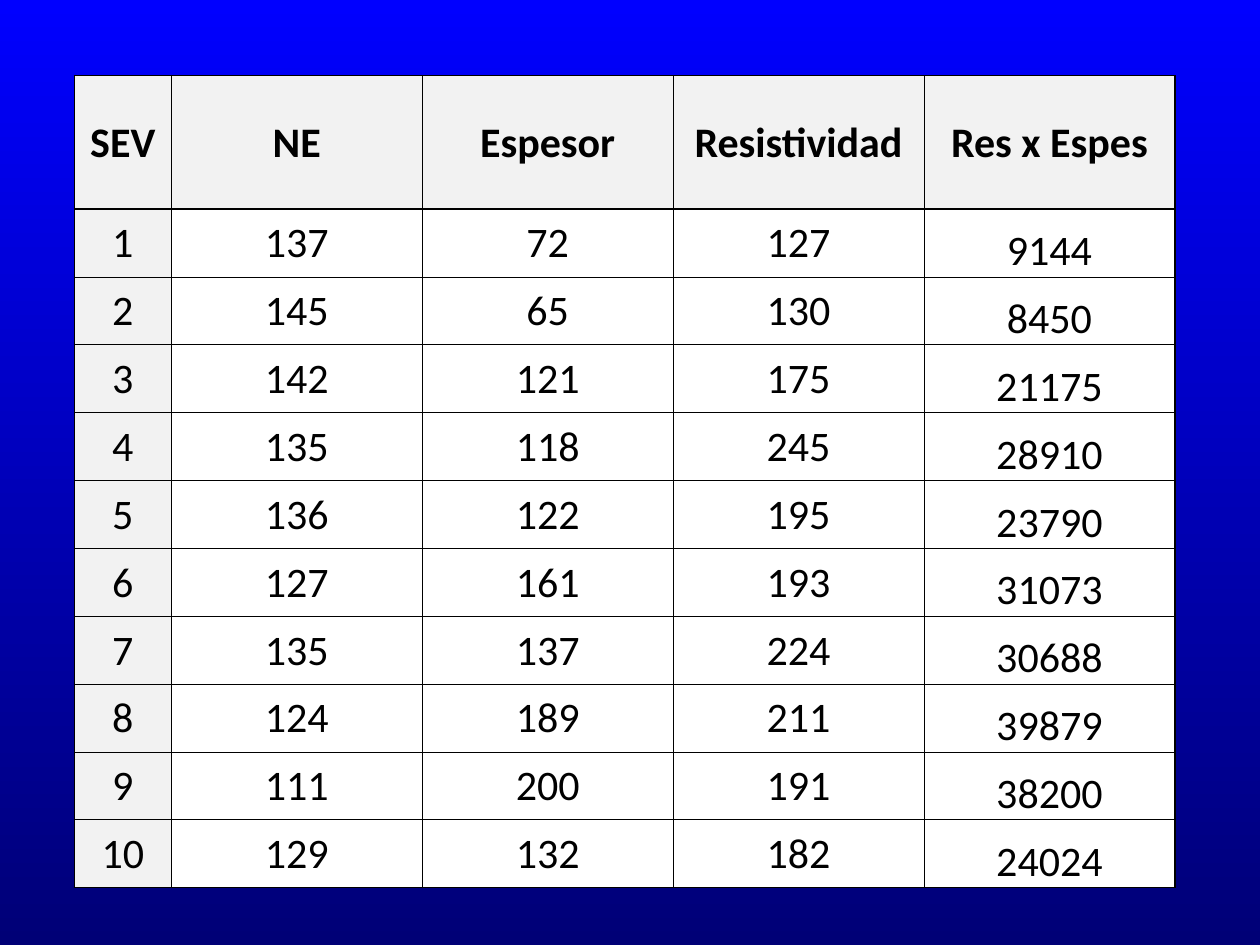
from pptx import Presentation
from pptx.dml.color import RGBColor
from pptx.enum.text import MSO_ANCHOR, PP_ALIGN
from pptx.oxml import parse_xml
from pptx.oxml.ns import nsdecls
from pptx.util import Pt

HEADERS = ["SEV", "NE", "Espesor", "Resistividad", "Res x Espes"]
SOUNDINGS = [
    (1, 137, 72, 127, 9144),
    (2, 145, 65, 130, 8450),
    (3, 142, 121, 175, 21175),
    (4, 135, 118, 245, 28910),
    (5, 136, 122, 195, 23790),
    (6, 127, 161, 193, 31073),
    (7, 135, 137, 224, 30688),
    (8, 124, 189, 211, 39879),
    (9, 111, 200, 191, 38200),
    (10, 129, 132, 182, 24024),
]


def color(value):
    return RGBColor.from_string(value)


class SlideBuilder:
    font_name = "Calibri"
    font_size = 24
    ink = "000000"
    label_fill = "F2F2F2"
    value_fill = "FFFFFF"
    thin, thick = 0.5, 1

    def __init__(self, slide):
        self.slide = slide

    def background(self, top, bottom):
        fill = self.slide.background.fill
        fill.gradient()
        fill.gradient_angle = 270
        for stop, position, value in zip(fill.gradient_stops, (0, 1), (top, bottom)):
            stop.position = position
            stop.color.rgb = color(value)

    def borders(self, cell, widths):
        properties = cell._tc.get_or_add_tcPr()
        for index, (side, width) in enumerate(widths.items()):
            properties.insert(index, parse_xml(
                f'<a:ln{side} {nsdecls("a")} w="{Pt(width)}"><a:solidFill>'
                f'<a:srgbClr val="{self.ink}"/></a:solidFill></a:ln{side}>'))

    def cell(self, cell, text, is_label, is_bold, anchor):
        cell.text = str(text)
        cell.vertical_anchor = anchor
        cell.margin_left = cell.margin_right = cell.margin_top = Pt(0.72)
        cell.margin_bottom = 0
        cell.fill.solid()
        cell.fill.fore_color.rgb = color(self.label_fill if is_label else self.value_fill)
        paragraph = cell.text_frame.paragraphs[0]
        paragraph.alignment = PP_ALIGN.CENTER
        font = paragraph.font
        font.name, font.size, font.bold = self.font_name, Pt(self.font_size), is_bold
        font.color.rgb = color(self.ink)

    def table(self, left, top, column_widths, row_heights, rows):
        frame = self.slide.shapes.add_table(
            len(row_heights), len(column_widths), Pt(left), Pt(top),
            Pt(sum(column_widths)), Pt(sum(row_heights)))
        table = frame.table
        table.horz_banding = False
        for column, width in zip(table.columns, column_widths):
            column.width = Pt(width)
        for row, height in zip(table.rows, row_heights):
            row.height = Pt(height)

        last_row, last_column = len(rows) - 1, len(column_widths) - 1
        for r, values in enumerate(rows):
            for c, value in enumerate(values):
                cell = table.cell(r, c)
                # The computed last column sits at the bottom of its cells
                is_product = r > 0 and c == last_column
                anchor = MSO_ANCHOR.BOTTOM if is_product else MSO_ANCHOR.MIDDLE
                self.cell(cell, value, r == 0 or c == 0, r == 0, anchor)
                # Thick lines around the table and under the header
                is_thick = {"L": c == 0, "R": c == last_column,
                            "T": r <= 1, "B": r in (0, last_row)}
                self.borders(cell, {side: self.thick if thick else self.thin
                                    for side, thick in is_thick.items()})


def main():
    presentation = Presentation()
    presentation.slide_width, presentation.slide_height = Pt(720), Pt(540)
    blank_layout = presentation.slide_layouts[6]
    builder = SlideBuilder(presentation.slides.add_slide(blank_layout))

    # Blue gradient background
    builder.background("0000FF", "000076")

    # Table of soundings
    builder.table(42.5, 43.2, [55.4] + [143.4] * 4, [76.3] + [38.8] * len(SOUNDINGS),
                  [HEADERS, *SOUNDINGS])

    presentation.save("out.pptx")


if __name__ == "__main__":
    main()
